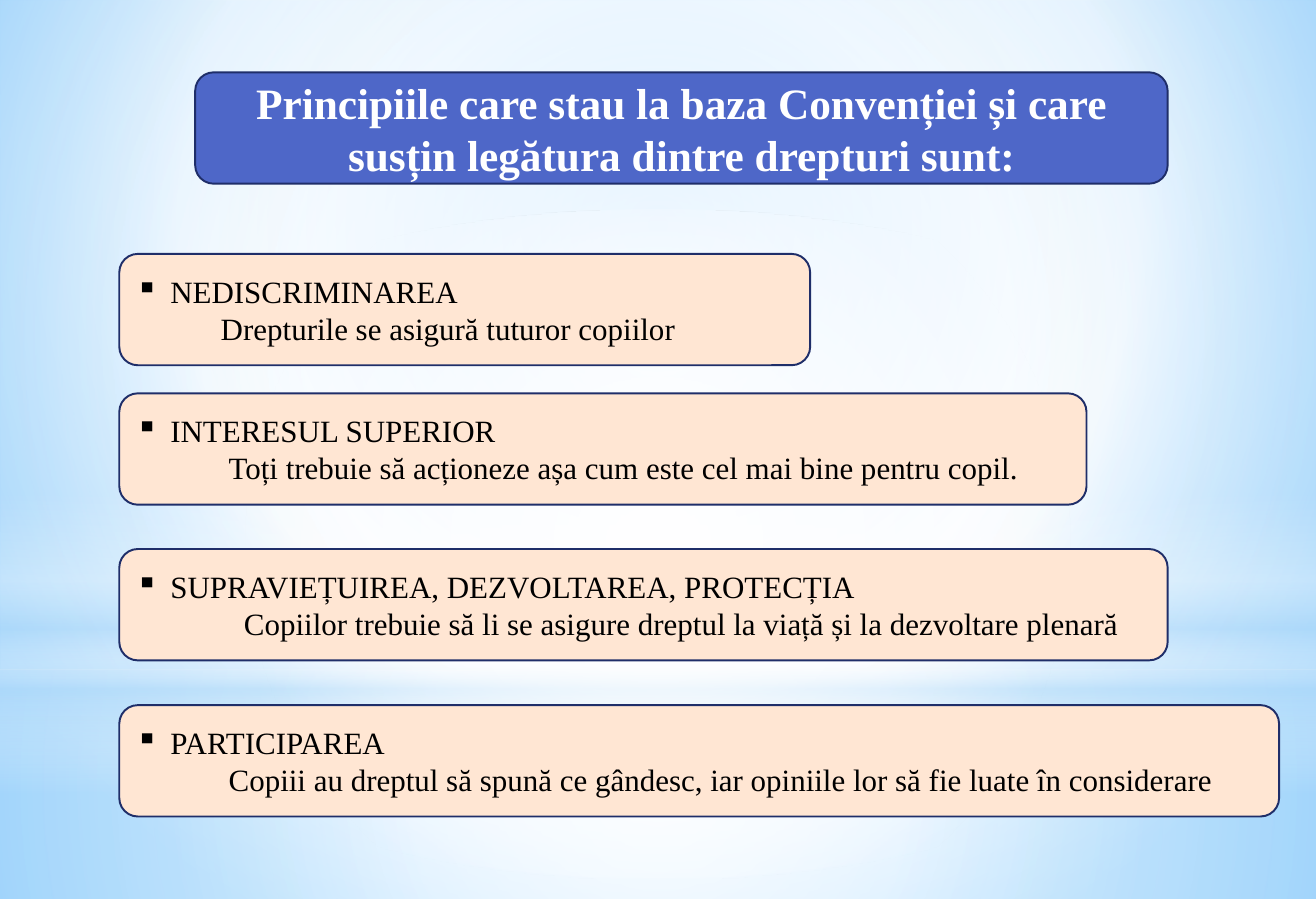
"""Builds a slide listing the four principles behind the Convention on children's rights."""
from lxml.etree import SubElement
from pptx import Presentation
from pptx.dml.color import RGBColor
from pptx.enum.shapes import MSO_SHAPE
from pptx.enum.text import MSO_ANCHOR, PP_ALIGN
from pptx.oxml.ns import qn
from pptx.util import Cm, Pt

FONT = "Times New Roman"
TITLE = "Principiile care stau la baza Convenției și care susțin legătura dintre drepturi sunt:"
TITLE_BOX = (4.45, 1.65, 22.17, 2.54)
PRINCIPLES = [
    ("NEDISCRIMINAREA", "Drepturile se asigură tuturor copiilor", 5.79, 15.75, 1.94),
    ("INTERESUL SUPERIOR", "Toți trebuie să acționeze așa cum este cel mai bine pentru copil.",
     8.97, 22.05, 2.12),
    ("SUPRAVIEȚUIREA, DEZVOLTAREA, PROTECȚIA",
     "Copiilor trebuie să li se asigure dreptul la viață și la dezvoltare plenară",
     12.52, 23.9, 2.47),
    ("PARTICIPAREA",
     "Copiii au dreptul să spună ce gândesc, iar opiniile lor să fie luate în considerare",
     16.08, 26.44, 2.12),
]
PRINCIPLE_LEFT, PRINCIPLE_HEIGHT, BULLET_INDENT = 2.72, 2.54, 0.79

CENTRE = (50, 50, 50, 50)
BACKGROUND_STOPS = [(0, "9ED5FF", 100), (60, "FFFFFF", 100), (100, "5BB9FF", 100)]
BACKGROUND_FOCUS = (20, 10, 20, 60)
GLOWS = [
    (MSO_SHAPE.RECTANGLE, (0, 15.27, 30, 5.23), CENTRE,
     [(0, "FFFFFF", 91), (37, "FFFFFF", 76), (100, "B4DCFA", 79)]),
    (MSO_SHAPE.RECTANGLE, (0, 0, 30, 15.27), CENTRE,
     [(0, "FFFFFF", 89), (48, "FFFFFF", 62), (100, "B4DCFA", 79)]),
    (MSO_SHAPE.RECTANGLE, (0, 11.25, 30, 6.83), None,
     [(0, "FFFFFF", 0), (29, "FFFFFF", 30), (45, "B4DCFA", 40),
      (55, "FFFFFF", 26), (65, "B4DCFA", 60), (100, "FFFFFF", 0)]),
    (MSO_SHAPE.OVAL, (0, 4.78, 30, 15.27), CENTRE,
     [(0, "FFFFFF", 100), (56, "FFFFFF", 0)]),
]


def color(value):
    return RGBColor.from_string(value)


def set_gradient(owner, fill, stops, focus):
    fill.gradient()
    gradient = owner.element.find(".//" + qn("a:gradFill"))
    gradient.clear()
    stop_list = SubElement(gradient, qn("a:gsLst"))
    for position, value, opacity in stops:
        stop = SubElement(stop_list, qn("a:gs"), pos=str(position * 1000))
        stop_color = SubElement(stop, qn("a:srgbClr"), val=value)
        if opacity < 100:
            SubElement(stop_color, qn("a:alpha"), val=str(opacity * 1000))
    if focus:
        route = SubElement(gradient, qn("a:path"), {"path": "circle"})
        sides = {side: str(share * 1000) for side, share in zip("ltrb", focus)}
        SubElement(route, qn("a:fillToRect"), sides)
    else:
        SubElement(gradient, qn("a:lin"), ang=str(90 * 60000), scaled="0")


def add_shape(slide, kind, box):
    shape = slide.shapes.add_shape(kind, *map(Cm, box))
    shape.shadow.inherit = False
    return shape


def add_card(slide, box, fill, lines, size, text_color, alignment, bold=False):
    card = add_shape(slide, MSO_SHAPE.ROUNDED_RECTANGLE, box)
    card.fill.solid()
    card.fill.fore_color.rgb = color(fill)
    card.line.color.rgb = color("1F2E69")
    card.line.width = Pt(1.25)
    text_frame = card.text_frame
    text_frame.word_wrap = True
    text_frame.vertical_anchor = MSO_ANCHOR.MIDDLE
    text_frame.text = "\n".join(lines)
    for paragraph in text_frame.paragraphs:
        paragraph.alignment = alignment
        font = paragraph.runs[0].font
        font.name, font.size, font.bold = FONT, Pt(size), bold
        font.color.rgb = color(text_color)
    return text_frame.paragraphs


def set_indent(paragraph, left, first=0):
    properties = paragraph._p.get_or_add_pPr()
    properties.set("marL", str(Cm(left)))
    properties.set("indent", str(Cm(first)))
    return properties


def main():
    presentation = Presentation()
    presentation.slide_width, presentation.slide_height = Cm(30), Cm(20.5)
    slide = presentation.slides.add_slide(presentation.slide_layouts[6])
    set_gradient(slide, slide.background.fill, BACKGROUND_STOPS, BACKGROUND_FOCUS)
    for kind, box, focus, stops in GLOWS:
        glow = add_shape(slide, kind, box)
        glow.line.fill.background()
        set_gradient(glow, glow.fill, stops, focus)

    add_card(slide, TITLE_BOX, "4E67C8", [TITLE], 28, "FFFFFF", PP_ALIGN.CENTER, True)
    for name, meaning, top, width, meaning_indent in PRINCIPLES:
        box = (PRINCIPLE_LEFT, top, width, PRINCIPLE_HEIGHT)
        heading, detail = add_card(slide, box, "FFE6D3", [name, meaning], 20,
                                   "000000", PP_ALIGN.LEFT)
        properties = set_indent(heading, BULLET_INDENT, -BULLET_INDENT)
        SubElement(properties, qn("a:buChar"), char="▪")
        set_indent(detail, meaning_indent)
    presentation.save("out.pptx")


if __name__ == "__main__":
    main()
